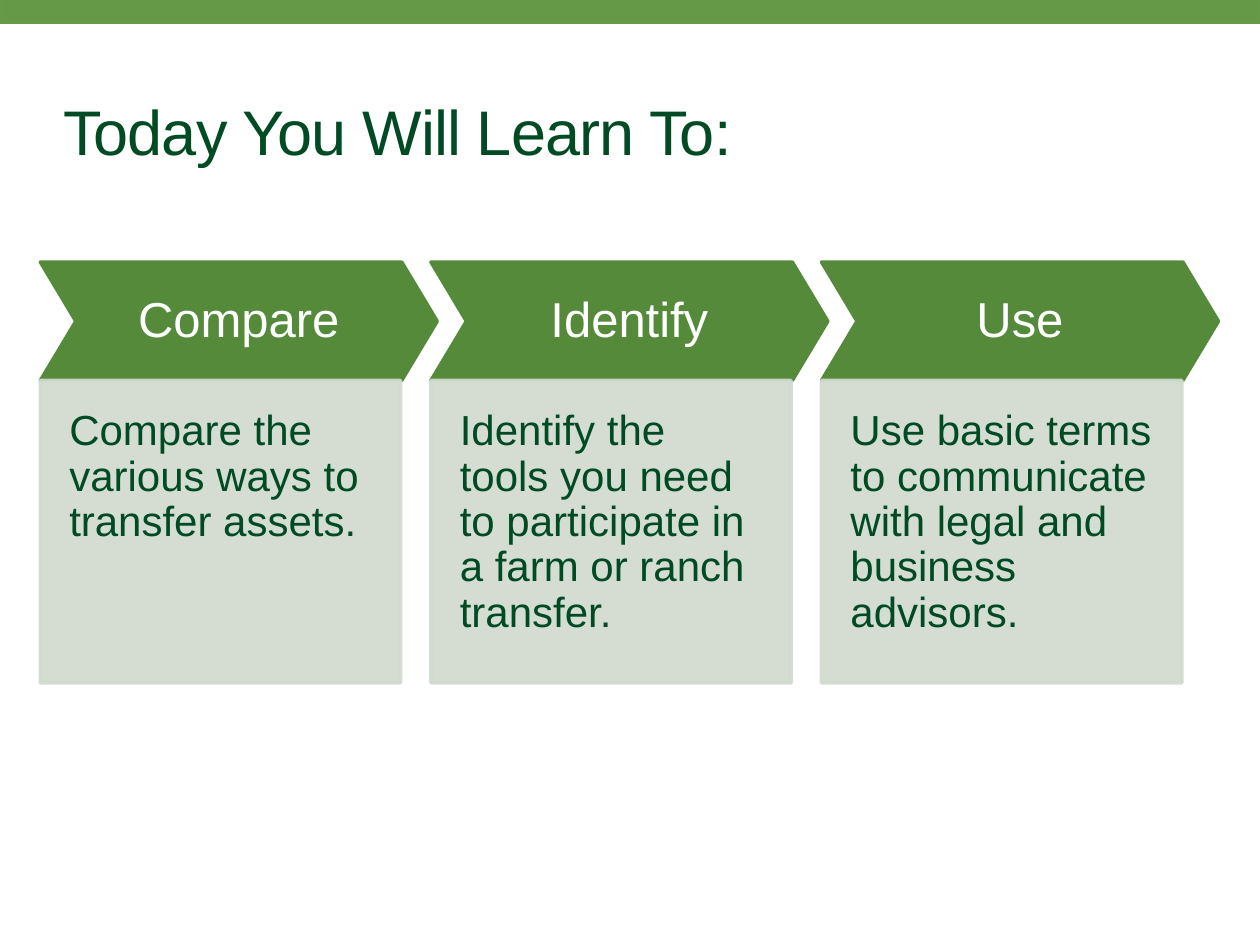
from lxml.etree import SubElement
from pptx import Presentation
from pptx.dml.color import RGBColor
from pptx.enum.shapes import MSO_SHAPE
from pptx.enum.text import MSO_ANCHOR, PP_ALIGN
from pptx.oxml.ns import qn
from pptx.util import Inches, Pt

BAR = RGBColor(0x66, 0x99, 0x47)
EDGE = RGBColor(0x67, 0x9A, 0x47)
GREEN = RGBColor(0x54, 0x8A, 0x3A)
PALE = RGBColor(0xD1, 0xDA, 0xCE)
DARK = RGBColor(0x00, 0x4B, 0x24)
WHITE = RGBColor(0xFF, 0xFF, 0xFF)

STEPS = [
    ("Compare", "Compare the various ways to transfer assets."),
    ("Identify", "Identify the tools you need to participate in a farm or ranch transfer."),
    ("Use", "Use basic terms to communicate with legal and business advisors."),
]


def write(shape, text, size, color, align=PP_ALIGN.LEFT, anchor=MSO_ANCHOR.MIDDLE,
          pads=(0, 0, 0, 0), leading=0.9, track=None):
    """Put formatted text in a shape; pads run left, top, right, bottom in inches."""
    frame = shape.text_frame
    frame.word_wrap = True
    frame.vertical_anchor = anchor
    (frame.margin_left, frame.margin_top,
     frame.margin_right, frame.margin_bottom) = map(Inches, pads)
    para = frame.paragraphs[0]
    para.alignment = align
    para.line_spacing = leading
    para.space_before = Pt(0)
    run = para.add_run()
    run.text = text
    run.font.name = "Arial"
    run.font.size = Pt(size)
    run.font.color.rgb = color
    if track is not None:
        run.font._element.set("spc", str(track))


def block(slide, kind, box, fill, line, alpha=None):
    """Add a filled and outlined shape, with an optional opacity in percent."""
    shape = slide.shapes.add_shape(kind, *map(Inches, box))
    shape.shadow.inherit = False
    shape.fill.solid()
    shape.fill.fore_color.rgb = fill
    shape.line.color.rgb = line
    shape.line.width = Pt(2)
    if alpha is not None:
        for color in shape._element.spPr.iter(qn("a:srgbClr")):
            SubElement(color, qn("a:alpha")).set("val", str(alpha * 1000))
    return shape


def head(slide, left, top, width, height):
    """Place and format the slide title."""
    title = slide.shapes.title
    title.left, title.top, title.width, title.height = map(
        Inches, (left, top, width, height))
    write(title, "Today You Will Learn To:", 36, DARK, leading=1, track=-50)


def step(slide, left, top, width, height, name, text):
    """Draw one chevron with its description panel below."""
    tall, tip = 0.94, 0.29
    arrow = block(slide, MSO_SHAPE.CHEVRON, (left, top, width, tall), GREEN, GREEN)
    arrow.adjustments[0] = 0.3
    write(arrow, name, 28, WHITE, align=PP_ALIGN.CENTER, pads=(0.12,) * 4)
    panel = block(slide, MSO_SHAPE.RECTANGLE,
                  (left, top + tall, width - tip, height - tall), PALE, PALE, alpha=90)
    write(panel, text, 24, DARK, anchor=MSO_ANCHOR.TOP,
          pads=(0.23, 0.23, 0.23, 0.45))


def flow(slide, left, top, width, height):
    """Spread the steps evenly across a box."""
    wide = 3.15
    pitch = (width - wide) / (len(STEPS) - 1)
    for i, (name, text) in enumerate(STEPS):
        step(slide, left + i * pitch, top, wide, height, name, text)


def main():
    """Build and save the slide."""
    deck = Presentation()
    deck.slide_width, deck.slide_height = Inches(10), Inches(7.5)
    slide = deck.slides.add_slide(deck.slide_layouts[5])
    block(slide, MSO_SHAPE.RECTANGLE, (0, -0.02, 10.01, 0.2), BAR, EDGE)
    head(slide, 0.5, 0.52, 9, 1.03)
    flow(slide, 0.32, 2.08, 9.35, 3.34)
    deck.save("out.pptx")


if __name__ == "__main__":
    main()
